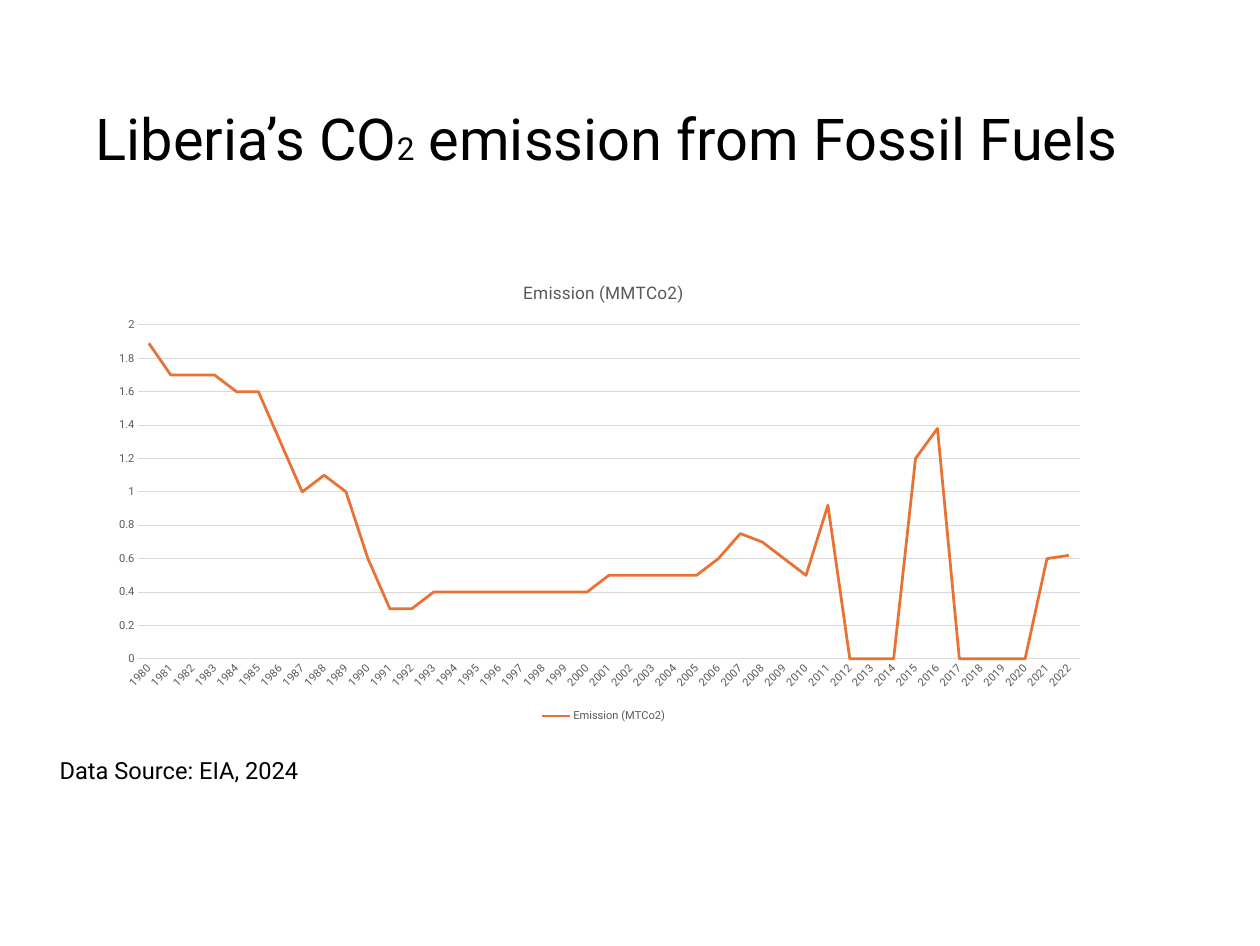
from lxml.etree import SubElement
from pptx import Presentation
from pptx.chart.data import CategoryChartData
from pptx.dml.color import RGBColor
from pptx.enum.chart import XL_CHART_TYPE as ChartType
from pptx.enum.chart import XL_LEGEND_POSITION as LegendPosition
from pptx.enum.chart import XL_TICK_LABEL_POSITION as LabelPosition
from pptx.enum.chart import XL_TICK_MARK as TickMark
from pptx.enum.text import MSO_ANCHOR as Anchor
from pptx.oxml.ns import qn
from pptx.util import Pt

HEADING = [("Liberia’s CO", 46.9), ("2", 25.6), (" emission from Fossil Fuels", 46.9)]
SOURCE_NOTE = [("Data Source: EIA, 2024", 19.2)]
CHART_TITLE = "Emission (MMTCo2)"
SERIES_NAME = "Emission (MTCo2)"
FIRST_YEAR = 1980
EMISSIONS = [
    1.89, 1.7, 1.7, 1.7, 1.6, 1.6, 1.3, 1, 1.1, 1,
    0.6, 0.3, 0.3, 0.4, 0.4, 0.4, 0.4, 0.4, 0.4, 0.4,
    0.4, 0.5, 0.5, 0.5, 0.5, 0.5, 0.6, 0.75, 0.7, 0.6,
    0.5, 0.92, 0, 0, 0, 1.2, 1.38, 0, 0, 0,
    0, 0.6, 0.62,
]

FONT = "Roboto"
COLORS = {"text": "000000", "label": "595959", "grid": "D9D9D9", "emission": "E97132"}

# Left, top, width, height in px
SLIDE_SIZE = (1260, 946)
HEADING_BOX = (87, 51, 1087, 182)
CHART_BOX = (107, 264, 993, 462)
PLOT_BOX = (138, 325, 942, 334)
SOURCE_BOX = (51, 752, 263, 37)
EMU_PER_PX = 914400 / 88.6


def emu(lengths):
    return [round(length * EMU_PER_PX) for length in lengths]


def color(name):
    return RGBColor.from_string(COLORS[name])


def style_font(font, size, color_name):
    for key, value in {"name": FONT, "size": Pt(size), "bold": False}.items():
        setattr(font, key, value)
    font.color.rgb = color(color_name)


def style_line(line, color_name, width):
    line.color.rgb = color(color_name)
    line.width = Pt(width)


def add_text(slide, box, runs, anchor, line_spacing):
    frame = slide.shapes.add_textbox(*emu(box)).text_frame
    frame.word_wrap = True
    frame.vertical_anchor = anchor
    paragraph = frame.paragraphs[0]
    paragraph.line_spacing = line_spacing
    for words, size in runs:
        run = paragraph.add_run()
        run.text = words
        style_font(run.font, size, "text")


def fix_plot_area(chart):
    """Pin the inner plot area to PLOT_BOX, as fractions of CHART_BOX."""
    left, top, width, height = CHART_BOX
    plot_left, plot_top, plot_width, plot_height = PLOT_BOX
    plot_area = chart._chartSpace.chart.plotArea
    layout = plot_area.find(qn("c:layout"))
    if layout is None:
        layout = SubElement(plot_area, qn("c:layout"))
        plot_area.insert(0, layout)
    manual = SubElement(layout, qn("c:manualLayout"))
    settings = {
        "layoutTarget": "inner", "xMode": "edge", "yMode": "edge",
        "x": round((plot_left - left) / width, 4),
        "y": round((plot_top - top) / height, 4),
        "w": round(plot_width / width, 4),
        "h": round(plot_height / height, 4),
    }
    for tag, value in settings.items():
        SubElement(manual, qn(f"c:{tag}")).set("val", str(value))


def add_emission_chart(slide):
    data = CategoryChartData()
    data.categories = [str(FIRST_YEAR + i) for i in range(len(EMISSIONS))]
    data.add_series(SERIES_NAME, EMISSIONS)
    chart = slide.shapes.add_chart(ChartType.LINE, *emu(CHART_BOX), data).chart
    style_font(chart.font, 10, "text")

    chart.has_title = True
    title = chart.chart_title
    title.include_in_layout = False
    title.text_frame.text = CHART_TITLE
    style_font(title.text_frame.paragraphs[0].runs[0].font, 14, "label")

    chart.has_legend = True
    chart.legend.position = LegendPosition.BOTTOM
    chart.legend.include_in_layout = False
    style_font(chart.legend.font, 9, "label")

    years, amounts = chart.category_axis, chart.value_axis
    for axis in (years, amounts):
        axis.major_tick_mark = axis.minor_tick_mark = TickMark.NONE
        axis.tick_label_position = LabelPosition.NEXT_TO_AXIS
        style_font(axis.tick_labels.font, 9, "label")
    style_line(years.format.line, "grid", 0.75)
    years.crosses_at = 4
    label_body = years._element.find(qn("c:txPr")).find(qn("a:bodyPr"))
    label_body.set("rot", "-2700000")

    scale = {"minimum_scale": 0, "maximum_scale": 2, "major_unit": 0.2}
    for key, value in scale.items():
        setattr(amounts, key, value)
    amounts.tick_labels.number_format = "General"
    amounts.tick_labels.number_format_is_linked = False
    amounts.format.line.fill.background()
    style_line(amounts.major_gridlines.format.line, "grid", 0.75)

    chart.plots[0].vary_by_categories = False
    emission = chart.plots[0].series[0]
    emission.smooth = False
    style_line(emission.format.line, "emission", 2.25)
    fix_plot_area(chart)


def main():
    deck = Presentation()
    deck.slide_width, deck.slide_height = emu(SLIDE_SIZE)
    slide = deck.slides.add_slide(deck.slide_layouts[6])
    add_text(slide, HEADING_BOX, HEADING, Anchor.MIDDLE, 0.9)
    add_emission_chart(slide)
    add_text(slide, SOURCE_BOX, SOURCE_NOTE, Anchor.TOP, 1.0)
    deck.save("out.pptx")


if __name__ == "__main__":
    main()
